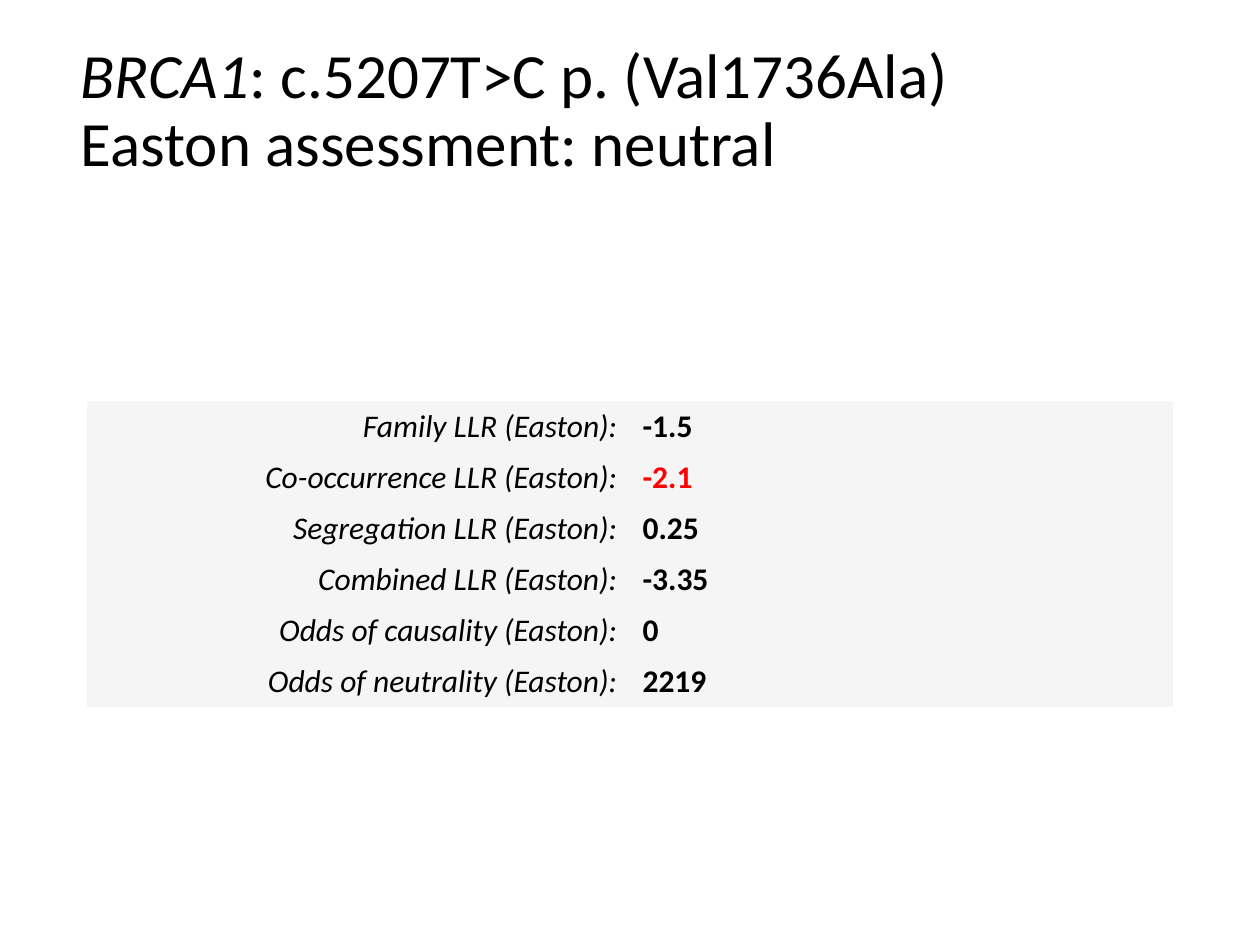
from pptx import Presentation
from pptx.dml.color import RGBColor
from pptx.enum.text import MSO_ANCHOR, MSO_AUTO_SIZE, PP_ALIGN
from pptx.util import Inches, Pt

LEFT, RIGHT = PP_ALIGN.LEFT, PP_ALIGN.RIGHT
TOP, MIDDLE = MSO_ANCHOR.TOP, MSO_ANCHOR.MIDDLE
BLACK = RGBColor(0x00, 0x00, 0x00)
RED = RGBColor(0xFF, 0x00, 0x00)
GREY = RGBColor(0xF5, 0xF5, 0xF5)
COL_W, ROW_H = Inches(4.31), Inches(0.4)


def add_run(p, text, size=18, color=BLACK, bold=False, italic=False):
    r = p.add_run()
    r.text = text
    r.font.name = "Calibri"
    r.font.size = Pt(size)
    r.font.color.rgb = color
    r.font.bold = bold
    r.font.italic = italic


prs = Presentation()
prs.slide_width, prs.slide_height = Inches(10), Inches(7.5)
s = prs.slides.add_slide(prs.slide_layouts[5])

title = s.shapes.title
title.left, title.top = Inches(0.54), Inches(0.3)
title.width, title.height = 2 * COL_W, Inches(1.45)
tf = title.text_frame
tf.word_wrap = True
tf.auto_size = MSO_AUTO_SIZE.NONE
tf.vertical_anchor = TOP
title_lines = [
    [("BRCA1", True), (": c.5207T>C p. (Val1736Ala)", False)],
    [("Easton assessment: neutral", False)],
]
for i, line in enumerate(title_lines):
    p = tf.add_paragraph() if i else tf.paragraphs[0]
    p.alignment = LEFT
    p.line_spacing = 0.9
    p.space_before = Pt(0)
    for text, italic in line:
        add_run(p, text, size=36, italic=italic)

scores = [
    ("Family LLR", "-1.5", BLACK),
    ("Co-occurrence LLR", "-2.1", RED),
    ("Segregation LLR", "0.25", BLACK),
    ("Combined LLR", "-3.35", BLACK),
    ("Odds of causality", "0", BLACK),
    ("Odds of neutrality", "2219", BLACK),
]
rows = len(scores)
table = s.shapes.add_table(
    rows, 2, (prs.slide_width - 2 * COL_W) // 2, Inches(3.18), 2 * COL_W, rows * ROW_H
).table
table.first_row = False
table.horz_banding = False
for col in table.columns:
    col.width = COL_W
for row, (label, value, color) in zip(table.rows, scores):
    row.height = ROW_H
    for cell, align in zip(row.cells, (RIGHT, LEFT)):
        cell.fill.solid()
        cell.fill.fore_color.rgb = GREY
        cell.vertical_anchor = MIDDLE
        cell.text_frame.paragraphs[0].alignment = align
    label_p, value_p = (cell.text_frame.paragraphs[0] for cell in row.cells)
    add_run(label_p, f"{label} (Easton):", italic=True)
    add_run(value_p, value, color=color, bold=True)

tbl_pr = table._tbl.tblPr
tbl_pr[0].text = "{2D5ABB26-0587-4C30-8999-92F81FD0307C}"

prs.save("out.pptx")
